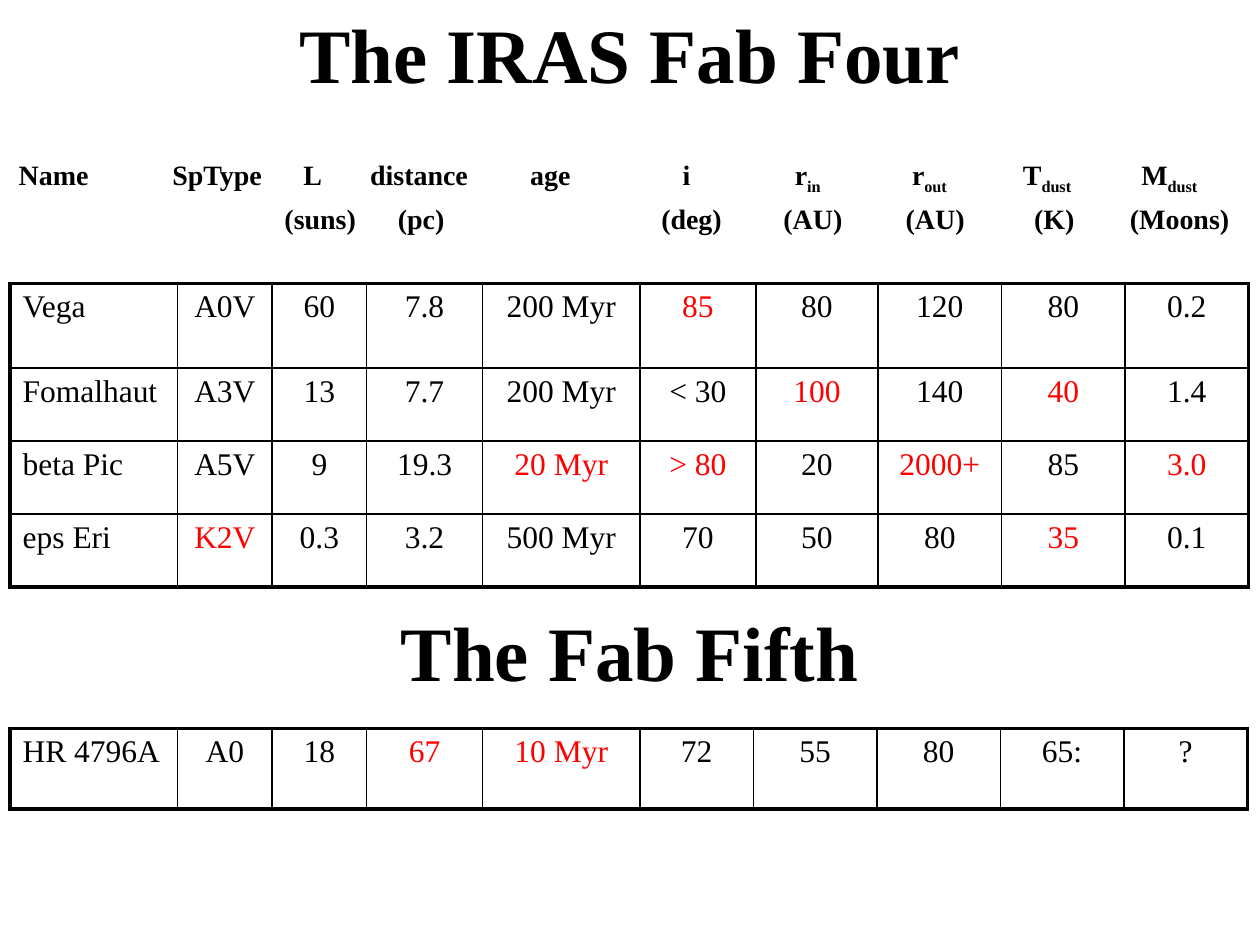
from lxml import etree
from pptx import Presentation
from pptx.dml.color import RGBColor
from pptx.enum.text import MSO_ANCHOR, PP_ALIGN
from pptx.oxml.ns import qn
from pptx.util import Inches, Pt

LEFT, CENTER = PP_ALIGN.LEFT, PP_ALIGN.CENTER
MIDDLE = MSO_ANCHOR.MIDDLE
BLACK = RGBColor(0x00, 0x00, 0x00)
RED = RGBColor(0xFF, 0x00, 0x00)
FONT = "Times New Roman"
TITLE_ONLY = 5
TEXT_INSET = 0.1
OUTER_LINE, INNER_LINE = Pt(2.25), Pt(1)

# Each heading: text, subscript, left edge in inches
HEADINGS = [
    ("Name", "", 0.15), ("SpType", "", 1.37), ("L", "", 2.41),
    ("distance", "", 2.94), ("age", "", 4.21), ("i", "", 5.42),
    ("r", "in", 6.31), ("r", "out", 7.24), ("T", "dust", 8.12),
    ("M", "dust", 9.06),
]
UNITS = [
    ("(suns)", "", 2.26), ("(pc)", "", 3.16), ("(deg)", "", 5.25),
    ("(AU)", "", 6.22), ("(AU)", "", 7.19), ("(K)", "", 8.21),
    ("(Moons)", "", 8.97),
]

FOUR_STARS = [
    ["Vega", "A0V", "60", "7.8", "200 Myr", "85", "80", "120", "80", "0.2"],
    ["Fomalhaut", "A3V", "13", "7.7", "200 Myr", "< 30", "100", "140", "40", "1.4"],
    ["beta Pic", "A5V", "9", "19.3", "20 Myr", "> 80", "20", "2000+", "85", "3.0"],
    ["eps Eri", "K2V", "0.3", "3.2", "500 Myr", "70", "50", "80", "35", "0.1"],
]
FOUR_RED = {(0, 5), (1, 6), (1, 8), (2, 4), (2, 5), (2, 7), (2, 9), (3, 1), (3, 8)}
FOUR_WIDTHS = [1.33, 0.75, 0.75, 0.92, 1.25, 0.92, 0.97, 0.98, 0.98, 0.98]

FIFTH_STAR = [["HR 4796A", "A0", "18", "67", "10 Myr", "72", "55", "80", "65:", "?"]]
FIFTH_RED = {(0, 3), (0, 4)}
FIFTH_WIDTHS = [1.33, 0.75, 0.75, 0.92, 1.25, 0.9, 0.98, 0.98, 0.98, 0.98]


def place(shape, box):
    shape.left, shape.top, shape.width, shape.height = map(Inches, box)


def add_span(para, text, size, bold=False, color=BLACK):
    span = para.add_run()
    span.text = text
    span.font.name = FONT
    span.font.size = Pt(size)
    span.font.bold = bold
    span.font.color.rgb = color
    return span


def fill_title(shape, box, text):
    place(shape, box)
    frame = shape.text_frame
    frame.word_wrap = True
    frame.vertical_anchor = MIDDLE
    para = frame.paragraphs[0]
    para.alignment = CENTER
    add_span(para, text, 44, bold=True)


def set_tab_stops(para, positions):
    stops = etree.SubElement(para._p.get_or_add_pPr(), qn("a:tabLst"))
    for position in positions:
        etree.SubElement(stops, qn("a:tab"),
                         pos=str(Inches(position - TEXT_INSET)), algn="l")


def add_column_headings(page, box):
    """Two tabbed lines: quantities above, their units below."""
    frame = page.shapes.add_textbox(*map(Inches, box)).text_frame
    frame.word_wrap = True
    names, units = frame.paragraphs[0], frame.add_paragraph()
    units.space_before = Pt(3.2)
    for para, labels in ((names, HEADINGS), (units, UNITS)):
        set_tab_stops(para, [left for _, _, left in labels])
        for text, subscript, _ in labels:
            add_span(para, "\t" + text, 16, bold=True)
            if subscript:
                span = add_span(para, subscript, 16, bold=True)
                span._r.get_or_add_rPr().set("baseline", "-25000")


def set_borders(cell, widths):
    """Draw left, right, top and bottom lines, in that order."""
    properties = cell._tc.get_or_add_tcPr()
    for index, (side, width) in enumerate(zip("LRTB", widths)):
        line = etree.Element(qn("a:ln" + side), w=str(width))
        fill = etree.SubElement(line, qn("a:solidFill"))
        etree.SubElement(fill, qn("a:srgbClr"), val=str(BLACK))
        properties.insert(index, line)


def add_star_table(page, box, stars, red_cells, column_widths, row_heights):
    last_row, last_column = len(stars) - 1, len(column_widths) - 1
    table = page.shapes.add_table(
        len(stars), len(column_widths), *map(Inches, box)).table
    table.first_row = False
    table.horz_banding = False
    for column, width in zip(table.columns, column_widths):
        column.width = Inches(width)
    for row, height in zip(table.rows, row_heights):
        row.height = Inches(height)
    for r, star in enumerate(stars):
        for c, value in enumerate(star):
            cell = table.cell(r, c)
            cell.fill.background()
            on_edge = (c == 0, c == last_column, r == 0, r == last_row)
            set_borders(cell, [OUTER_LINE if edge else INNER_LINE for edge in on_edge])
            para = cell.text_frame.paragraphs[0]
            para.alignment = CENTER if c else LEFT
            add_span(para, value, 18, color=RED if (r, c) in red_cells else BLACK)


def main():
    deck = Presentation()
    deck.slide_width, deck.slide_height = Inches(10), Inches(7.5)
    page = deck.slides.add_slide(deck.slide_layouts[TITLE_ONLY])

    fill_title(page.shapes.title, (0.75, 0, 8.5, 0.83), "The IRAS Fab Four")
    add_star_table(page, (0.08, 2.25, 9.83, 2.42), FOUR_STARS, FOUR_RED,
                   FOUR_WIDTHS, [0.67, 0.58, 0.58, 0.58])
    add_column_headings(page, (0, 1.2, 10, 0.64))
    add_star_table(page, (0.08, 5.78, 9.83, 0.64), FIFTH_STAR, FIFTH_RED,
                   FIFTH_WIDTHS, [0.64])
    subtitle_box = (0.75, 4.75, 8.5, 0.83)
    fill_title(page.shapes.add_textbox(*map(Inches, subtitle_box)),
               subtitle_box, "The Fab Fifth")

    deck.save("out.pptx")


if __name__ == "__main__":
    main()
